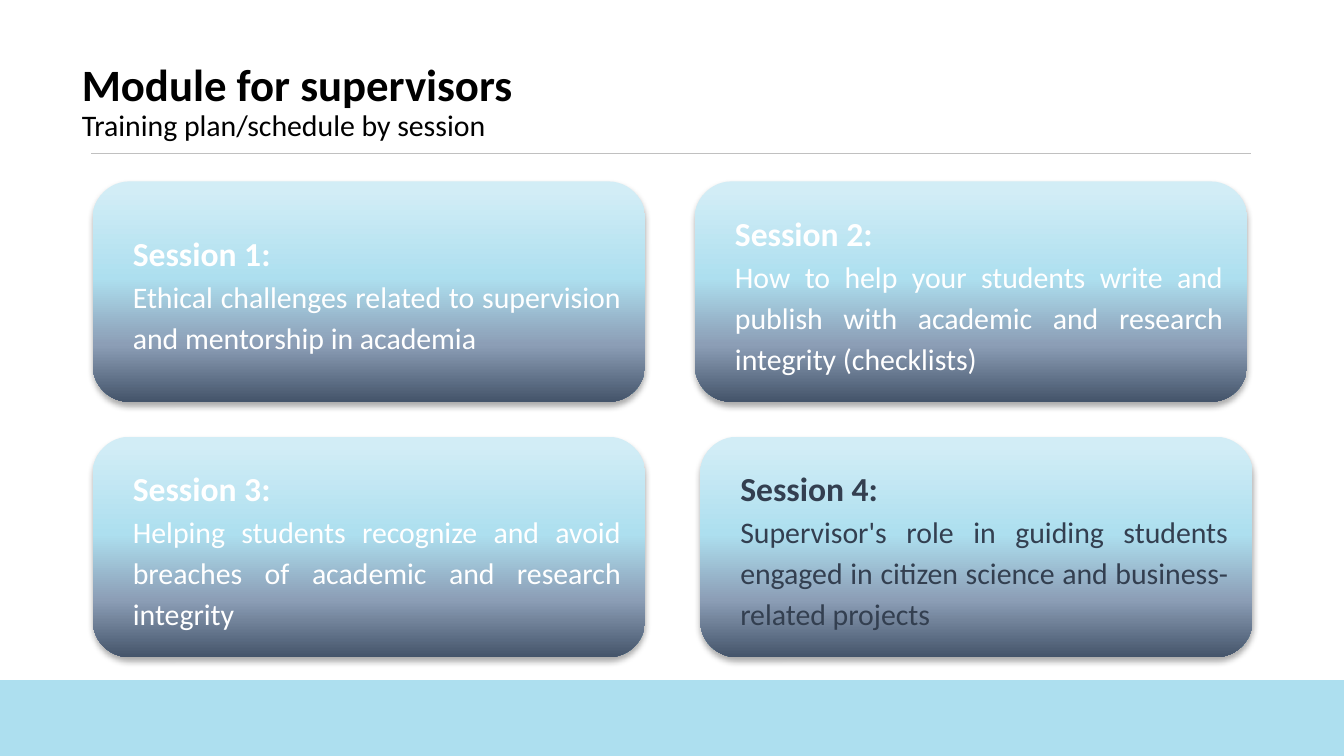
from lxml import etree
from pptx import Presentation
from pptx.dml.color import RGBColor
from pptx.enum.shapes import MSO_CONNECTOR, MSO_SHAPE
from pptx.enum.text import MSO_ANCHOR, PP_ALIGN
from pptx.oxml.ns import qn
from pptx.util import Inches, Pt

RECT, ROUNDED = MSO_SHAPE.RECTANGLE, MSO_SHAPE.ROUNDED_RECTANGLE
STRAIGHT = MSO_CONNECTOR.STRAIGHT
MIDDLE = MSO_ANCHOR.MIDDLE
LEFT, JUSTIFY = PP_ALIGN.LEFT, PP_ALIGN.JUSTIFY

FONT = "Calibri"
SKY, WHITE, BLACK, NAVY, GREY = "ADDFEF", "FFFFFF", "000000", "333F50", "C0C0C0"
GRADIENT = [(4, "D2EDF6"), (44, SKY), (74, "8C9EB6"), (100, "44546A")]

SLIDE_W = 10
SLIDE_H = SLIDE_W * 9 / 16
FOOTER_Y = 5.07
CARD_W, CARD_H = 4.11, 1.64
SESSIONS = [
    (0.69, 1.35, "Session 1:", WHITE,
     "Ethical challenges related to supervision and mentorship in academia"),
    (5.17, 1.35, "Session 2:", WHITE,
     "How to help your students write and publish with academic and research "
     "integrity (checklists)"),
    (0.69, 3.25, "Session 3:", WHITE,
     "Helping students recognize and avoid breaches of academic and research integrity"),
    (5.21, 3.25, "Session 4:", NAVY,
     "Supervisor's role in guiding students engaged in citizen science and "
     "business-related projects"),
]


def rgb(color):
    return RGBColor.from_string(color)


def add_run(p, text, size, color, bold=False):
    r = p.add_run()
    r.text = text
    r.font.name = FONT
    r.font.size = Pt(size)
    r.font.bold = bold
    r.font.color.rgb = rgb(color)


def add_color(parent, color):
    return etree.SubElement(parent, qn("a:srgbClr"), val=color)


def set_gradient(sp, stops):
    grad = etree.Element(qn("a:gradFill"), rotWithShape="1")
    gs_lst = etree.SubElement(grad, qn("a:gsLst"))
    for pos, color in stops:
        add_color(etree.SubElement(gs_lst, qn("a:gs"), pos=str(pos * 1000)), color)
    etree.SubElement(grad, qn("a:lin"), ang="5400000", scaled="0")
    sp._element.spPr.find(qn("a:prstGeom")).addnext(grad)


def set_shadow(sp):
    sp.shadow.inherit = False
    effects = sp._element.spPr.find(qn("a:effectLst"))
    shadow = etree.SubElement(effects, qn("a:outerShdw"), blurRad=str(Pt(3.5)),
                              dist=str(Pt(2.2)), dir="5400000", rotWithShape="0")
    etree.SubElement(add_color(shadow, BLACK), qn("a:alpha"), val="32000")


def add_footer(slide, x, y, w, h):
    sp = slide.shapes.add_shape(RECT, Inches(x), Inches(y), Inches(w), Inches(h))
    sp.shadow.inherit = False
    sp.fill.solid()
    sp.fill.fore_color.rgb = rgb(SKY)
    sp.line.color.rgb = rgb(SKY)
    sp.line.width = Pt(1)


def add_header(slide, x, y, w, h):
    rule_y = Inches(y + h)
    rule = slide.shapes.add_connector(
        STRAIGHT, Inches(x + 0.17), rule_y, Inches(x + 8.8), rule_y)
    rule.line.color.rgb = rgb(GREY)
    rule.line.width = Pt(0.5)
    etree.SubElement(rule._element.spPr, qn("a:effectLst"))

    box = slide.shapes.add_textbox(Inches(x), Inches(y), Inches(w), Inches(h))
    tf = box.text_frame
    tf.word_wrap = True
    tf.vertical_anchor = MIDDLE
    p = tf.paragraphs[0]
    p.line_spacing = 0.9
    add_run(p, "Module for supervisors", 24, BLACK, True)
    p.add_line_break()
    add_run(p, "Training plan/schedule by session", 16, BLACK)


def add_card(slide, x, y, w, h, heading, color, body):
    sp = slide.shapes.add_shape(ROUNDED, Inches(x), Inches(y), Inches(w), Inches(h))
    set_gradient(sp, GRADIENT)
    sp.line.fill.background()
    set_shadow(sp)
    tf = sp.text_frame
    tf.word_wrap = True
    tf.vertical_anchor = MIDDLE
    lines = [(heading, 18, True, LEFT), (body, 16, False, JUSTIFY)]
    for i, (text, size, bold, align) in enumerate(lines):
        p = tf.add_paragraph() if i else tf.paragraphs[0]
        p.alignment = align
        p.line_spacing = 1.15
        p._p.get_or_add_pPr().set("marL", str(Inches(0.12)))
        add_run(p, text, size, color, bold)


def main():
    prs = Presentation()
    prs.slide_width, prs.slide_height = Inches(SLIDE_W), Inches(SLIDE_H)
    slide = prs.slides.add_slide(prs.slide_layouts[6])
    add_footer(slide, 0, FOOTER_Y, SLIDE_W, SLIDE_H - FOOTER_Y)
    add_header(slide, 0.51, 0.39, 7.18, 0.75)
    for x, y, heading, color, body in SESSIONS:
        add_card(slide, x, y, CARD_W, CARD_H, heading, color, body)
    prs.save("out.pptx")


if __name__ == "__main__":
    main()
